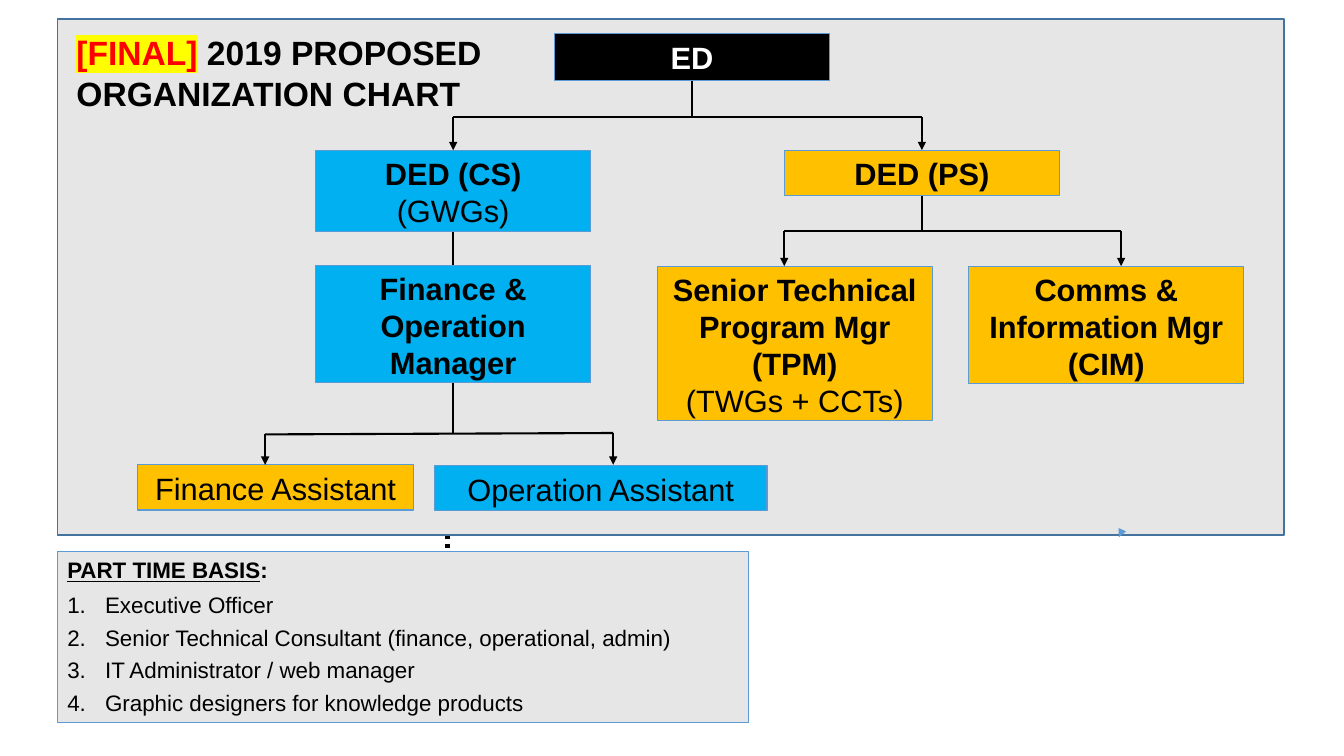
from lxml.etree import SubElement
from pptx import Presentation
from pptx.dml.color import RGBColor
from pptx.enum.dml import MSO_LINE
from pptx.enum.shapes import MSO_CONNECTOR, MSO_SHAPE
from pptx.enum.text import MSO_ANCHOR, MSO_AUTO_SIZE, PP_ALIGN
from pptx.oxml.ns import qn
from pptx.util import Pt

BLACK, WHITE, RED, YELLOW = "000000", "FFFFFF", "FF0000", "FFFF00"
BLUE, GOLD, GREY = "00B0F0", "FFC000", "E7E6E6"
OUTLINE, PANEL_OUTLINE = "5B9BD5", "43739E"
BOTTOM, TOP = 2, 0
BOX_WIDTH = 196.6


def color(hex_value):
    return RGBColor.from_string(hex_value)


def add_run(paragraph, text, size, hex_color=BLACK, highlight=None, **formats):
    run = paragraph.add_run()
    run.text = text
    for attribute, value in {"name": "Arial", "size": Pt(size), **formats}.items():
        setattr(run.font, attribute, value)
    run.font.color.rgb = color(hex_color)
    if highlight:
        properties = run.font._element
        mark = SubElement(properties, qn("a:highlight"))
        SubElement(mark, qn("a:srgbClr"), val=highlight)
        properties.find(qn("a:solidFill")).addnext(mark)


def prepare_frame(shape):
    formats = {
        "word_wrap": True,
        "auto_size": MSO_AUTO_SIZE.SHAPE_TO_FIT_TEXT,
        "vertical_anchor": MSO_ANCHOR.TOP,
    }
    for attribute, value in formats.items():
        setattr(shape.text_frame, attribute, value)
    return shape.text_frame


def add_rectangle(slide, left, top, width, height, fill, outline=OUTLINE, weight=0.75):
    rectangle = slide.shapes.add_shape(
        MSO_SHAPE.RECTANGLE, Pt(left), Pt(top), Pt(width), Pt(height))
    rectangle.shadow.inherit = False
    rectangle.fill.solid()
    rectangle.fill.fore_color.rgb = color(fill)
    rectangle.line.color.rgb = color(outline)
    rectangle.line.width = Pt(weight)
    return rectangle


def add_position(slide, left, top, height, fill, lines, width=BOX_WIDTH, text_color=BLACK):
    """Draw one post; lines holds (text, bold) pairs."""
    position = add_rectangle(slide, left, top, width, height, fill)
    frame = prepare_frame(position)
    for index, (text, bold) in enumerate(lines):
        paragraph = frame.add_paragraph() if index else frame.paragraphs[0]
        paragraph.alignment = PP_ALIGN.CENTER
        add_run(paragraph, text, 22, text_color, bold=bold)
    return position


def add_line(slide, x1, y1, x2, y2, arrow=False, start=None, end=None,
             hex_color=BLACK, weight=1.5, dash=None):
    line = slide.shapes.add_connector(
        MSO_CONNECTOR.STRAIGHT, Pt(x1), Pt(y1), Pt(x2), Pt(y2))
    line.line.color.rgb = color(hex_color)
    line.line.width = Pt(weight)
    if dash:
        line.line.dash_style = dash
    if arrow:
        SubElement(line.line._get_or_add_ln(), qn("a:tailEnd"), type="triangle")
    SubElement(line._element.spPr, qn("a:effectLst"))
    if start:
        line.begin_connect(start, BOTTOM)
    if end:
        line.end_connect(end, TOP)


def add_title(slide):
    title = slide.shapes.add_textbox(Pt(47.5), Pt(19.4), Pt(398.2), Pt(65.5))
    paragraph = prepare_frame(title).paragraphs[0]
    add_run(paragraph, "[FINAL]", 24, RED, YELLOW, bold=True)
    add_run(paragraph, " 2019 PROPOSED ORGANIZATION CHART", 24, bold=True)


def add_part_time_list(slide, roles):
    frame = prepare_frame(add_rectangle(slide, 41, 393.8, 493.9, 122.4, GREY))
    heading = frame.paragraphs[0]
    heading.alignment = PP_ALIGN.LEFT
    heading.space_after = Pt(6)
    add_run(heading, "PART TIME BASIS", 16, bold=True, underline=True)
    add_run(heading, ":", 16, bold=True)
    for role in roles:
        item = frame.add_paragraph()
        item.alignment = PP_ALIGN.LEFT
        item.space_after = Pt(4)
        properties = item._p.get_or_add_pPr()
        properties.set("marL", str(Pt(27)))
        properties.set("indent", str(-Pt(27)))
        SubElement(properties, qn("a:buFont"), typeface="+mj-lt")
        SubElement(properties, qn("a:buAutoNum"), type="arabicPeriod")
        add_run(item, role, 16)


def main():
    presentation = Presentation()
    presentation.slide_width, presentation.slide_height = Pt(960), Pt(540)
    slide = presentation.slides.add_slide(presentation.slide_layouts[6])

    # Dotted link to the part-time staff, and the chart panel
    add_line(slide, 319.7, 382.3, 319.7, 431.3, weight=3, dash=MSO_LINE.ROUND_DOT)
    add_rectangle(slide, 41, 13.7, 876.2, 382.3 - 13.7, GREY, PANEL_OUTLINE, 1)

    # Directors
    director = add_position(slide, 396, 23.8, 33.8, BLACK, [("ED", True)], text_color=WHITE)
    deputy_cs = add_position(slide, 225.4, 107.3, 58.3, BLUE,
                             [("DED (CS)", True), ("(GWGs)", False)])
    deputy_ps = add_position(slide, 560.2, 107.3, 32.4, GOLD, [("DED (PS)", True)])

    # Trunk that passes behind the finance manager
    add_line(slide, 323.7, 165.6, 323.7, 310.3, start=deputy_cs)

    # Managers and assistants
    add_position(slide, 225.4, 189.4, 84.2, BLUE, [("Finance & Operation Manager", True)])
    add_position(slide, 469.4, 190.1, 110.2, GOLD,
                 [("Senior Technical Program Mgr (TPM)", True), ("(TWGs + CCTs)", False)])
    add_position(slide, 691.9, 190.1, 84.2, GOLD, [("Comms & Information Mgr (CIM)", True)])
    add_position(slide, 98.6, 331.9, 32.4, GOLD, [("Finance Assistant", False)])
    add_position(slide, 310.3, 332.6, 32.4, BLUE, [("Operation Assistant", False)], width=237.6)

    # Director to deputies
    add_line(slide, 494.3, 57.6, 494.3, 83.6, start=director)
    add_line(slide, 323.7, 83.6, 658.5, 83.6)
    add_line(slide, 323.7, 83.6, 323.7, 107.3, arrow=True, end=deputy_cs)
    add_line(slide, 658.5, 83.6, 658.5, 107.3, arrow=True, end=deputy_ps)

    # Deputy (PS) to managers
    add_line(slide, 658.5, 139.7, 658.5, 165, start=deputy_ps)
    add_line(slide, 560.2, 165, 800.8, 165)
    for manager_x in (560.2, 800.8):
        add_line(slide, manager_x, 165, manager_x, 190.1, arrow=True)

    # Finance manager to assistants
    add_line(slide, 189.4, 310.3, 438, 309.3)
    for assistant_x, branch_y in ((189.4, 310.3), (438, 309.3)):
        add_line(slide, assistant_x, branch_y, assistant_x, 332, arrow=True)

    # Small marker on the panel's lower edge
    add_line(slide, 799.9, 382.3, 799.2, 383.8, arrow=True, hex_color=OUTLINE, weight=0.5)

    add_title(slide)
    add_part_time_list(slide, [
        "Executive Officer",
        "Senior Technical Consultant (finance, operational, admin)",
        "IT Administrator / web manager",
        "Graphic designers for knowledge products",
    ])
    presentation.save("out.pptx")


if __name__ == "__main__":
    main()
